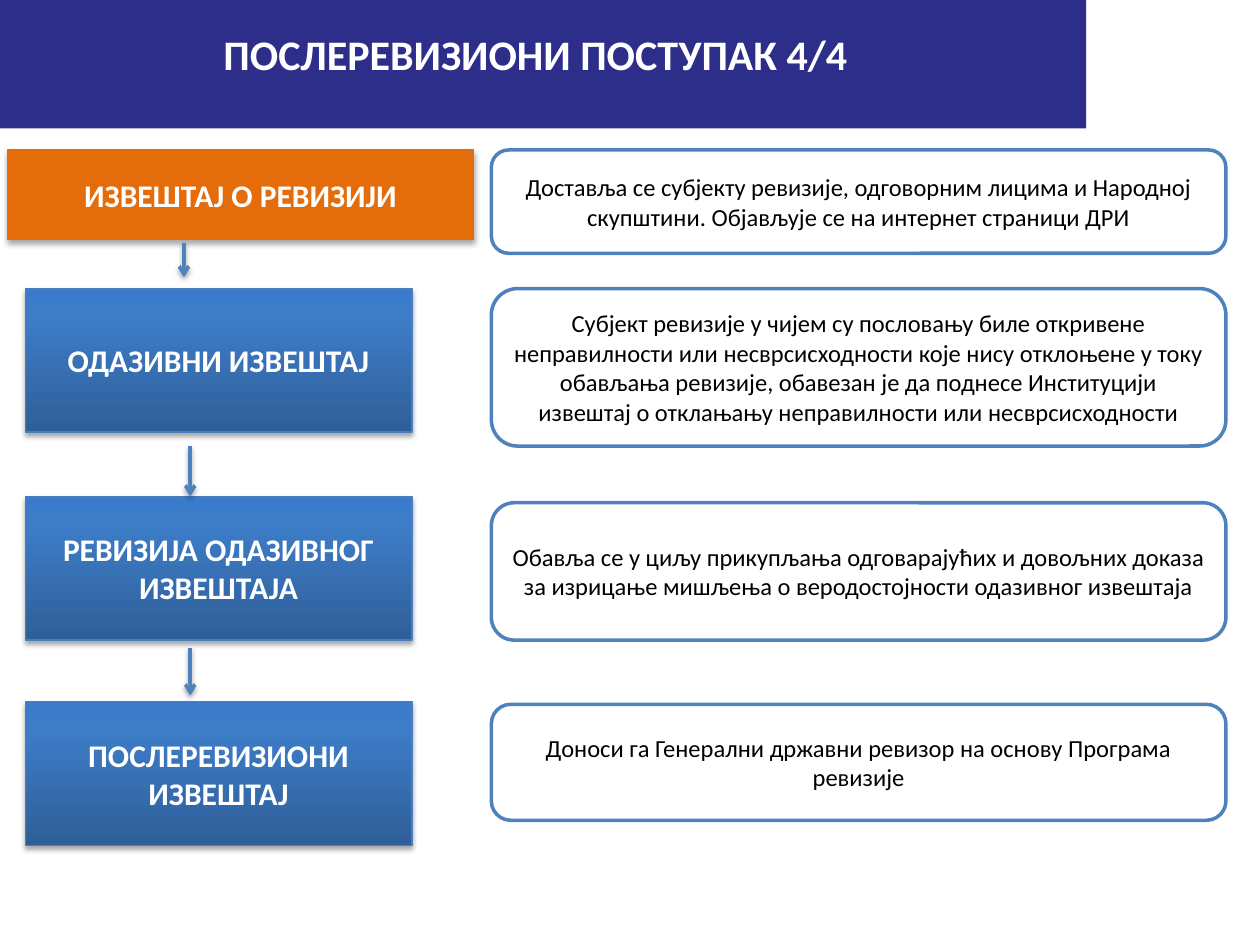
from dataclasses import dataclass

from lxml.etree import SubElement
from pptx import Presentation
from pptx.dml.color import RGBColor
from pptx.enum.shapes import MSO_CONNECTOR, MSO_SHAPE
from pptx.enum.text import MSO_ANCHOR, MSO_AUTO_SIZE, PP_ALIGN
from pptx.oxml import parse_xml
from pptx.oxml.ns import nsdecls, qn
from pptx.util import Inches, Pt

# The slide is a grid of 100 columns by 75 rows of square cells.
CELL = Inches(0.1)
FONT = "Calibri"
NAVY, ORANGE, BLUE, EDGE = "2D2D8A", "E46C0A", "4F81BD", "4B7EBC"
WHITE, BLACK = "FFFFFF", "000000"
GRADIENT = ((0, "2F5F99"), (80, "3D7CC7"), (100, "3A7CCB"))
STEP_LEFT, STEP_WIDTH, STEP_HEIGHT = 2, 30.7, 11.4
NOTE_LEFT, NOTE_WIDTH = 39, 58.3


@dataclass(frozen=True)
class Box:
    left: float
    top: float
    width: float
    height: float

    def emu(self) -> list[int]:
        return [grid(v) for v in (self.left, self.top, self.width, self.height)]


@dataclass(frozen=True)
class Stage:
    title: str
    box: Box
    note: str
    note_top: float
    note_height: float
    fill: str | None = None  # None gives the blue gradient
    line: str = EDGE


@dataclass(frozen=True)
class Arrow:
    col: float
    top: float
    bottom: float


def step_box(top: float) -> Box:
    return Box(STEP_LEFT, top, STEP_WIDTH, STEP_HEIGHT)


STAGES = (
    Stage("ИЗВЕШТАЈ О РЕВИЗИЈИ", Box(0.6, 11.9, 37, 7.1),
          "Доставља се субјекту ревизије, одговорним лицима и Народној "
          "скупштини. Објављује се на интернет страници ДРИ",
          11.9, 8.2, ORANGE, ORANGE),
    Stage("ОДАЗИВНИ ИЗВЕШТАЈ", step_box(22.9),
          "Субјект ревизије у чијем су пословању биле откривене "
          "неправилности или несврсисходности које нису отклоњене у току "
          "обављања ревизије, обавезан је да поднесе Институцији "
          "извештај о отклањању неправилности или несврсисходности",
          22.9, 12.5),
    Stage("РЕВИЗИЈА ОДАЗИВНОГ ИЗВЕШТАЈА", step_box(39.4),
          "Обавља се у циљу прикупљања одговарајућих и довољних доказа "
          "за изрицање мишљења о веродостојности одазивног извештаја",
          39.9, 10.9),
    Stage("ПОСЛЕРЕВИЗИОНИ ИЗВЕШТАЈ", step_box(55.7),
          "Доноси га Генерални државни ревизор на основу Програма ревизије",
          55.9, 9.2),
)
ARROWS = (Arrow(14.6, 19.3, 22), Arrow(15.1, 35.4, 39.4), Arrow(15.1, 51.4, 55.2))


def grid(cells: float) -> int:
    return round(cells * CELL)


def rgb(color: str) -> RGBColor:
    return RGBColor.from_string(color)


def write(sp, text: str, size: float, color: str, bold: bool = False,
          anchor=MSO_ANCHOR.MIDDLE) -> None:
    tf = sp.text_frame
    tf.word_wrap = True
    tf.vertical_anchor = anchor
    tf.text = text
    p = tf.paragraphs[0]
    p.alignment = PP_ALIGN.CENTER
    font = p.runs[0].font
    font.name, font.size, font.bold = FONT, Pt(size), bold
    font.color.rgb = rgb(color)


def fill_gradient(sp) -> None:
    """Fill with GRADIENT, running from the bottom edge to the top."""
    stops = "".join(f'<a:gs pos="{pos * 1000}"><a:srgbClr val="{color}"/></a:gs>'
                    for pos, color in GRADIENT)
    grad = parse_xml(f'<a:gradFill {nsdecls("a")} rotWithShape="1"><a:gsLst>{stops}'
                     '</a:gsLst><a:lin ang="16200000" scaled="0"/></a:gradFill>')
    sp.fill.background()
    spPr = sp._element.spPr
    spPr.replace(spPr.find(qn("a:noFill")), grad)


def add_shadow(sp, dist: float, opacity: int) -> None:
    """Cast a soft black shadow downwards; call after the line is set."""
    spPr = sp._element.spPr
    effects = spPr.find(qn("a:effectLst"))
    if effects is None:
        effects = SubElement(spPr, qn("a:effectLst"))
    shadow = SubElement(effects, qn("a:outerShdw"), blurRad=str(Pt(3.1)),
                        dist=str(Pt(dist)), dir="5400000", rotWithShape="0")
    color = SubElement(shadow, qn("a:srgbClr"), val=BLACK)
    SubElement(color, qn("a:alpha"), val=str(opacity * 1000))


def add_box(s, kind, box: Box, fill: str | None, line: str | None = None,
            width: float = 0.75):
    sp = s.shapes.add_shape(kind, *box.emu())
    sp.shadow.inherit = False
    if fill is None:
        fill_gradient(sp)
    else:
        sp.fill.solid()
        sp.fill.fore_color.rgb = rgb(fill)
    if line is None:
        sp.line.fill.background()
    else:
        sp.line.color.rgb = rgb(line)
        sp.line.width = Pt(width)
    return sp


def add_header(s, title: str) -> None:
    add_box(s, MSO_SHAPE.RECTANGLE, Box(0, 0, 86.2, 10.2), NAVY)
    tb = s.shapes.add_textbox(*Box(5.1, 1.8, 74.8, 5).emu())
    write(tb, title, 24, WHITE, True, MSO_ANCHOR.TOP)
    tb.text_frame.auto_size = MSO_AUTO_SIZE.SHAPE_TO_FIT_TEXT


def add_stage(s, stage: Stage) -> None:
    sp = add_box(s, MSO_SHAPE.RECTANGLE, stage.box, stage.fill, stage.line)
    add_shadow(sp, 1.8, 35)
    write(sp, stage.title, 18, WHITE, True)
    note_box = Box(NOTE_LEFT, stage.note_top, NOTE_WIDTH, stage.note_height)
    note = add_box(s, MSO_SHAPE.ROUNDED_RECTANGLE, note_box, WHITE, BLUE, 2)
    write(note, stage.note, 14, BLACK)


def add_arrow(s, arrow: Arrow) -> None:
    x = grid(arrow.col)
    line = s.shapes.add_connector(MSO_CONNECTOR.STRAIGHT, x, grid(arrow.top),
                                  x, grid(arrow.bottom))
    line.line.color.rgb = rgb(BLUE)
    line.line.width = Pt(2)
    SubElement(line._element.spPr.find(qn("a:ln")), qn("a:tailEnd"), type="arrow")
    add_shadow(line, 1.6, 38)


def main() -> None:
    prs = Presentation()
    prs.slide_width, prs.slide_height = grid(100), grid(75)
    s = prs.slides.add_slide(prs.slide_layouts[6])
    add_header(s, "ПОСЛЕРЕВИЗИОНИ ПОСТУПАК 4/4")
    for stage in STAGES:
        add_stage(s, stage)
    for arrow in ARROWS:
        add_arrow(s, arrow)
    prs.save("out.pptx")


if __name__ == "__main__":
    main()
